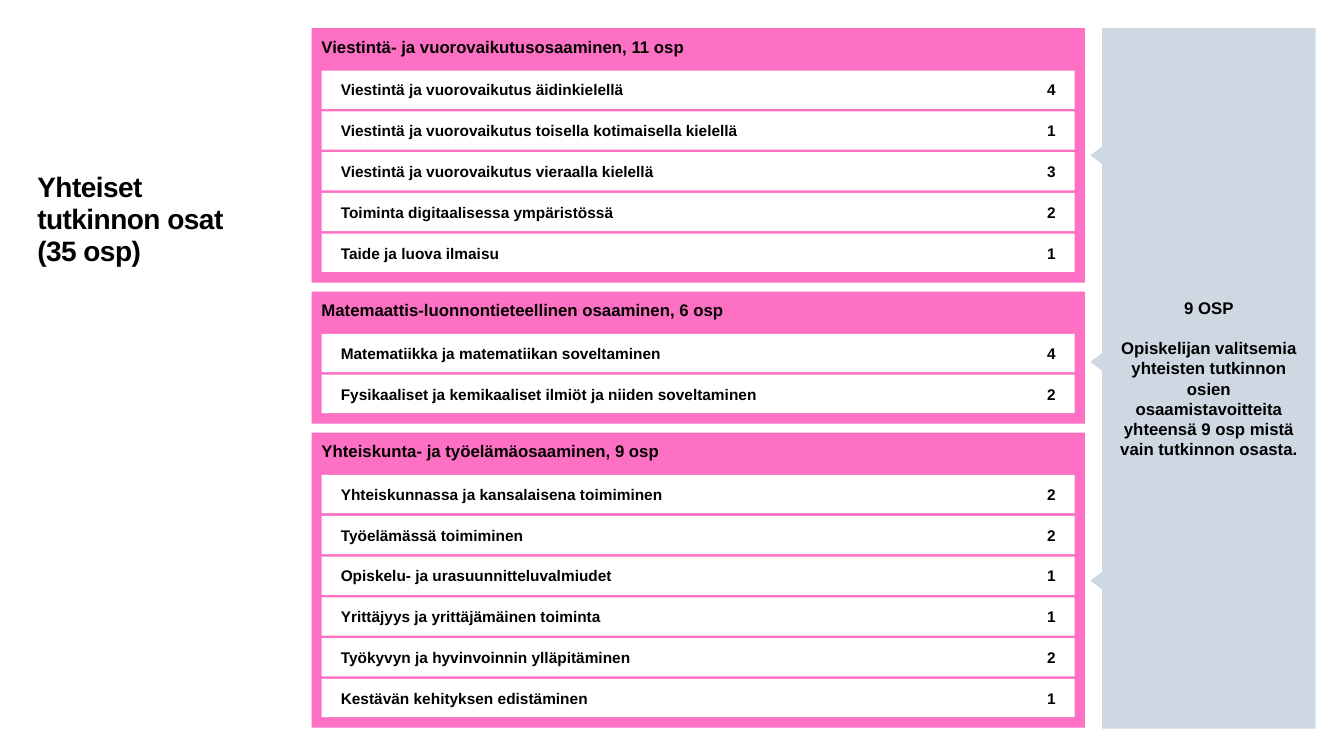
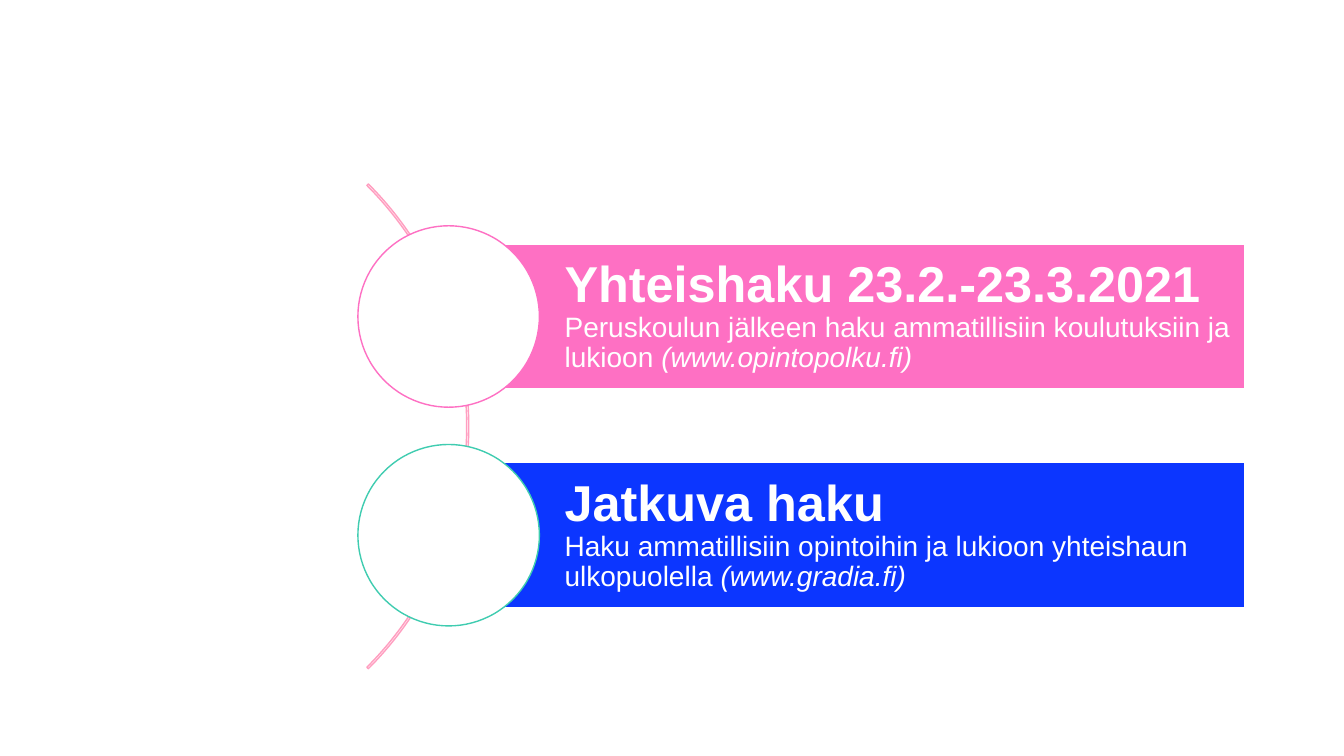
from dataclasses import dataclass

from lxml.etree import SubElement
from pptx import Presentation
from pptx.dml.color import RGBColor as RGB
from pptx.enum.shapes import MSO_SHAPE as Shape
from pptx.enum.text import MSO_ANCHOR as Anchor, PP_ALIGN as Align
from pptx.oxml.ns import qn
from pptx.util import Inches, Pt


@dataclass(frozen=True)
class Theme:
    font: str = "Arial"
    black: str = "000000"
    white: str = "FFFFFF"
    pink: str = "FE70C3"
    rose: str = "FF9EC0"
    blue: str = "0C36FF"
    mint: str = "3FCCB0"
    grey: str = "CDD8E3"
    row: int = 11
    head: int = 12
    body: int = 20
    title: int = 20
    lead: int = 36


T = Theme()

TITLE = "Yhteiset\vtutkinnon osat\v(35 osp)"

# heading, middle of the side arrow, rows of (name, points)
UNITS = [
    ("Viestintä- ja vuorovaikutusosaaminen, 11 osp", 1.54, [
        ("Viestintä ja vuorovaikutus äidinkielellä", 4),
        ("Viestintä ja vuorovaikutus toisella kotimaisella kielellä", 1),
        ("Viestintä ja vuorovaikutus vieraalla kielellä", 3),
        ("Toiminta digitaalisessa ympäristössä", 2),
        ("Taide ja luova ilmaisu", 1),
    ]),
    ("Matemaattis-luonnontieteellinen osaaminen, 6 osp", 3.59, [
        ("Matematiikka ja matematiikan soveltaminen", 4),
        ("Fysikaaliset ja kemikaaliset ilmiöt ja niiden soveltaminen", 2),
    ]),
    ("Yhteiskunta- ja työelämäosaaminen, 9 osp", 5.76, [
        ("Yhteiskunnassa ja kansalaisena toimiminen", 2),
        ("Työelämässä toimiminen", 2),
        ("Opiskelu- ja urasuunnitteluvalmiudet", 1),
        ("Yrittäjyys ja yrittäjämäinen toiminta", 1),
        ("Työkyvyn ja hyvinvoinnin ylläpitäminen", 2),
        ("Kestävän kehityksen edistäminen", 1),
    ]),
]

CHOICE = [
    "9 OSP",
    "Opiskelijan valitsemia yhteisten tutkinnon osien osaamistavoitteita "
    "yhteensä 9 osp mistä vain tutkinnon osasta.",
]

# heading, text, address, bar colour, ring colour
CALLS = [
    ("Yhteishaku 23.2.-23.3.2021",
     "Peruskoulun jälkeen haku ammatillisiin koulutuksiin ja lukioon ",
     "(www.opintopolku.fi)", T.pink, T.pink),
    ("Jatkuva haku",
     "Haku ammatillisiin opintoihin ja lukioon yhteishaun ulkopuolella ",
     "(www.gradia.fi)", T.blue, T.mint),
]


def draw(slide, kind, box, fill=None, line=None):
    shape = slide.shapes.add_shape(kind, *map(Inches, box))
    shape.shadow.inherit = False
    if fill:
        shape.fill.solid()
        shape.fill.fore_color.rgb = RGB.from_string(fill)
    else:
        shape.fill.background()
    if line:
        shape.line.color.rgb = RGB.from_string(line)
        shape.line.width = Pt(1)
    else:
        shape.line.fill.background()
    return shape


def frame(shape, inset=(0.1, 0.05, 0.1, 0.05), anchor=Anchor.TOP):
    """Set wrapping, margins and anchor; return the text frame."""
    text = shape.text_frame
    text.word_wrap = True
    text.vertical_anchor = anchor
    (text.margin_left, text.margin_top,
     text.margin_right, text.margin_bottom) = map(Inches, inset)
    return text


def style(run, size, color=T.black, bold=True, italic=False):
    font = run.font
    font.name, font.size = T.font, Pt(size)
    font.bold, font.italic = bold, italic
    font.color.rgb = RGB.from_string(color)


def write(para, text, size, color=T.black, align=Align.LEFT):
    para.text = text
    para.alignment = align
    for run in para.runs:
        style(run, size, color)


def add_title(slide, text):
    box = map(Inches, (0.37, 1.71, 2.7, 2.05))
    para = frame(slide.shapes.add_textbox(*box), (0, 0, 0, 0)).paragraphs[0]
    write(para, text, T.title)
    para.line_spacing = 0.95
    for run in para.runs:
        run.font._element.set("spc", "-40")


def add_tab(para, place):
    """Add a right-aligned tab stop."""
    tabs = SubElement(para._p.get_or_add_pPr(), qn("a:tabLst"))
    SubElement(tabs, qn("a:tab"), pos=str(Inches(place)), algn="r")


def add_row(slide, box, name, points):
    shape = draw(slide, Shape.RECTANGLE, box, T.white)
    para = frame(shape, (0.19, 0.05, 0.1, 0.05), Anchor.MIDDLE).paragraphs[0]
    add_tab(para, 7.09)
    write(para, f"{name}\t{points}", T.row)


def add_units(slide):
    left, top, width, full = 3.09, 0.28, 7.67, 6.94
    gap, rim, head, extra, tall = 0.09, 0.1, 0.42, 0.5, 0.38
    count = sum(len(rows) for _, _, rows in UNITS)
    spare = full - gap * (len(UNITS) - 1) - extra * len(UNITS)
    step = spare / count
    for name, _, rows in UNITS:
        high = extra + step * len(rows)
        panel = draw(slide, Shape.RECTANGLE, (left, top, width, high), T.pink)
        text = frame(panel, (0.1, 0.08, 0.1, 0.05))
        write(text.paragraphs[0], name, T.head)
        for i, (item, points) in enumerate(rows):
            box = (left + rim, top + head + i * step, width - 2 * rim, tall)
            add_row(slide, box, item, points)
        top += high + gap


def add_choice(slide):
    wide, high = 0.39, 0.26
    for _, mid, _ in UNITS:
        box = (10.75, mid - high / 2, wide, high)
        draw(slide, Shape.ISOSCELES_TRIANGLE, box, T.grey).rotation = 270
    side = draw(slide, Shape.RECTANGLE, (10.93, 0.28, 2.12, 6.95), T.grey)
    text = frame(side, anchor=Anchor.MIDDLE)
    first, second = text.paragraphs[0], text.add_paragraph()
    for para, words in zip((first, second), CHOICE):
        write(para, words, T.head, align=Align.CENTER)
    first.space_after = Pt(14)


def add_call(slide, mid, call):
    head, body, link, color, ring = call
    left, high, size = 4.45, 1.44, 1.8
    bar = draw(slide, Shape.RECTANGLE, (left, mid - high / 2, 7.9, high),
               color, T.white)
    text = frame(bar, (1.15, 0.1, 0.1, 0.1), Anchor.MIDDLE)
    first, second = text.paragraphs[0], text.add_paragraph()
    write(first, head, T.lead, T.white)
    second.alignment = Align.LEFT
    for words, slant in ((body, False), (link, True)):
        run = second.add_run()
        run.text = words
        style(run, T.body, T.white, bold=False, italic=slant)
    for para in (first, second):
        para.line_spacing = 0.9
    draw(slide, Shape.OVAL, (left - size / 2, mid - size / 2, size, size),
         T.white, ring)


def unit_slide(slide):
    add_units(slide)
    add_title(slide, TITLE)
    add_choice(slide)


def call_slide(slide):
    arc = draw(slide, Shape.BLOCK_ARC, (-2.15, 0.83, 6.8, 6.8), line=T.rose)
    for i, value in enumerate((189, 27, 0.003)):
        arc.adjustments[i] = value
    for i, call in enumerate(CALLS):
        add_call(slide, 3.14 + i * 2.17, call)


def main():
    deck = Presentation()
    deck.slide_width, deck.slide_height = Inches(13.33), Inches(7.5)
    for build in (unit_slide, call_slide):
        build(deck.slides.add_slide(deck.slide_layouts[6]))
    deck.save("out.pptx")


if __name__ == "__main__":
    main()
